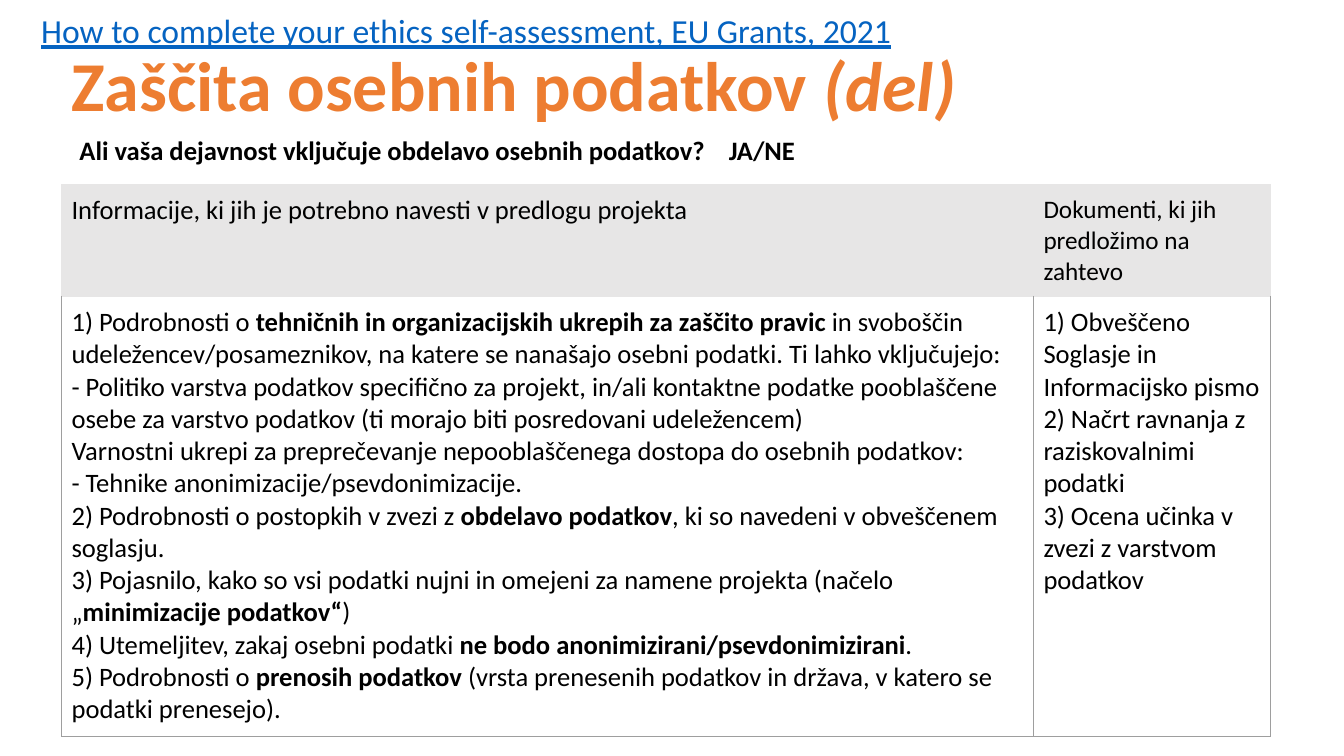
from lxml.etree import SubElement
from pptx import Presentation
from pptx.dml.color import RGBColor
from pptx.enum.text import MSO_ANCHOR, MSO_AUTO_SIZE, PP_ALIGN
from pptx.oxml.ns import qn
from pptx.util import Pt

PX = 9144  # 100 px to the inch
FONT = "Calibri"
COLORS = {"title": "ED7D31", "link": "0563C1", "text": "000000",
          "header": "E7E6E6", "border": "9E9E9E"}

# Each paragraph is a list of runs; every second run is bold
PROPOSAL_INFO = [
    ["1) Podrobnosti o ", "tehničnih in organizacijskih ukrepih za zaščito pravic",
     " in svoboščin udeležencev/posameznikov, na katere se nanašajo osebni podatki. "
     "Ti lahko vključujejo:"],
    ["- Politiko varstva podatkov specifično za projekt, in/ali kontaktne podatke "
     "pooblaščene osebe za varstvo podatkov (ti morajo biti posredovani udeležencem)"],
    ["Varnostni ukrepi za preprečevanje nepooblaščenega dostopa do osebnih podatkov:"],
    ["- Tehnike anonimizacije/psevdonimizacije."],
    ["2) Podrobnosti o postopkih v zvezi z ", "obdelavo podatkov",
     ", ki so navedeni v obveščenem soglasju."],
    ["3) Pojasnilo, kako so vsi podatki nujni in omejeni za namene projekta (načelo „",
     "minimizacije podatkov“", ")"],
    ["4) Utemeljitev, zakaj osebni podatki ", "ne bodo anonimizirani/psevdonimizirani", "."],
    ["5) Podrobnosti o ", "prenosih podatkov",
     " (vrsta prenesenih podatkov in država, v katero se podatki prenesejo)."],
]
DOCUMENTS = [
    ["1) Obveščeno Soglasje in Informacijsko pismo"],
    ["2) Načrt ravnanja z raziskovalnimi podatki"],
    ["3) Ocena učinka v zvezi z varstvom podatkov"],
]
INFO_HEADING = [["Informacije, ki jih je potrebno navesti v predlogu projekta"]]
DOCUMENTS_HEADING = [["Dokumenti, ki jih predložimo na zahtevo"]]


def px(*lengths):
    return [length * PX for length in lengths]


def add_run(paragraph, text, size, color="text", bold=False, italic=False, underline=False):
    run = paragraph.add_run()
    run.text = text
    font = run.font
    font.name, font.size = FONT, Pt(size)
    font.bold, font.italic, font.underline = bold, italic, underline
    font.color.rgb = RGBColor.from_string(COLORS[color])


def set_margins(holder, margin):
    holder.margin_left = holder.margin_right = margin * PX
    holder.margin_top = holder.margin_bottom = margin * PX


def fill_title(slide):
    title = slide.shapes.title
    title.left, title.top, title.width, title.height = px(61, 44, 1150, 89)
    frame = title.text_frame
    frame.auto_size = MSO_AUTO_SIZE.NONE
    frame.vertical_anchor = MSO_ANCHOR.MIDDLE
    heading = frame.paragraphs[0]
    heading.alignment = PP_ALIGN.LEFT
    heading.line_spacing = 0.9
    add_run(heading, "Zaščita osebnih podatkov ", 50, "title", bold=True)
    add_run(heading, "(del)", 50, "title", bold=True, italic=True)


def add_line_of_text(slide, box, text, size, tab=None, **style):
    frame = slide.shapes.add_textbox(*px(*box)).text_frame
    frame.word_wrap = True
    set_margins(frame, 10)
    paragraph = frame.paragraphs[0]
    if tab:
        tabs = SubElement(paragraph._p.get_or_add_pPr(), qn("a:tabLst"))
        SubElement(tabs, qn("a:tab"), pos=str(tab * PX), algn="l")
    add_run(paragraph, text, size, **style)


def set_borders(cell, sides):
    properties = cell._tc.get_or_add_tcPr()
    for side, color in sides.items():
        line = SubElement(properties, qn(f"a:ln{side}"), w=str(Pt(0.75)))
        solid = SubElement(line, qn("a:solidFill"))
        SubElement(solid, qn("a:srgbClr"), val=COLORS[color])


def fill_cell(cell, paragraphs, size, is_header):
    set_margins(cell, 10)
    cell.vertical_anchor = MSO_ANCHOR.TOP
    edge = "header" if is_header else "border"
    set_borders(cell, {"L": edge, "R": edge, "T": "header", "B": edge})
    if is_header:
        cell.fill.solid()
        cell.fill.fore_color.rgb = RGBColor.from_string(COLORS["header"])
    else:
        cell.fill.background()
    frame = cell.text_frame
    for index, runs in enumerate(paragraphs):
        paragraph = frame.add_paragraph() if index else frame.paragraphs[0]
        for position, text in enumerate(runs):
            add_run(paragraph, text, size, bold=position % 2 == 1)


def add_requirements_table(slide):
    widths, heights = px(964, 235), px(111, 437)
    table = slide.shapes.add_table(2, 2, *px(61, 183), sum(widths), sum(heights)).table
    table.first_row = table.horz_banding = False
    for column, width in zip(table.columns, widths):
        column.width = width
    for row, height in zip(table.rows, heights):
        row.height = height
    rows = [[(INFO_HEADING, 19), (DOCUMENTS_HEADING, 18)],
            [(PROPOSAL_INFO, 19), (DOCUMENTS, 19)]]
    for r, row in enumerate(rows):
        for c, (paragraphs, size) in enumerate(row):
            fill_cell(table.cell(r, c), paragraphs, size, is_header=r == 0)


def main():
    presentation = Presentation()
    presentation.slide_width, presentation.slide_height = px(1333, 750)
    slide = presentation.slides.add_slide(presentation.slide_layouts[5])

    # Title and source reference
    fill_title(slide)
    add_line_of_text(slide, (31, 0, 881, 58),
                     "How to complete your ethics self-assessment, EU Grants, 2021",
                     24, color="link", underline=True)

    # Requirements and the screening question above them
    add_requirements_table(slide)
    add_line_of_text(slide, (69, 123, 804, 40),
                     "Ali vaša dejavnost vključuje obdelavo osebnih podatkov?\tJA/NE",
                     19, tab=644, bold=True)

    presentation.save("out.pptx")


if __name__ == "__main__":
    main()
